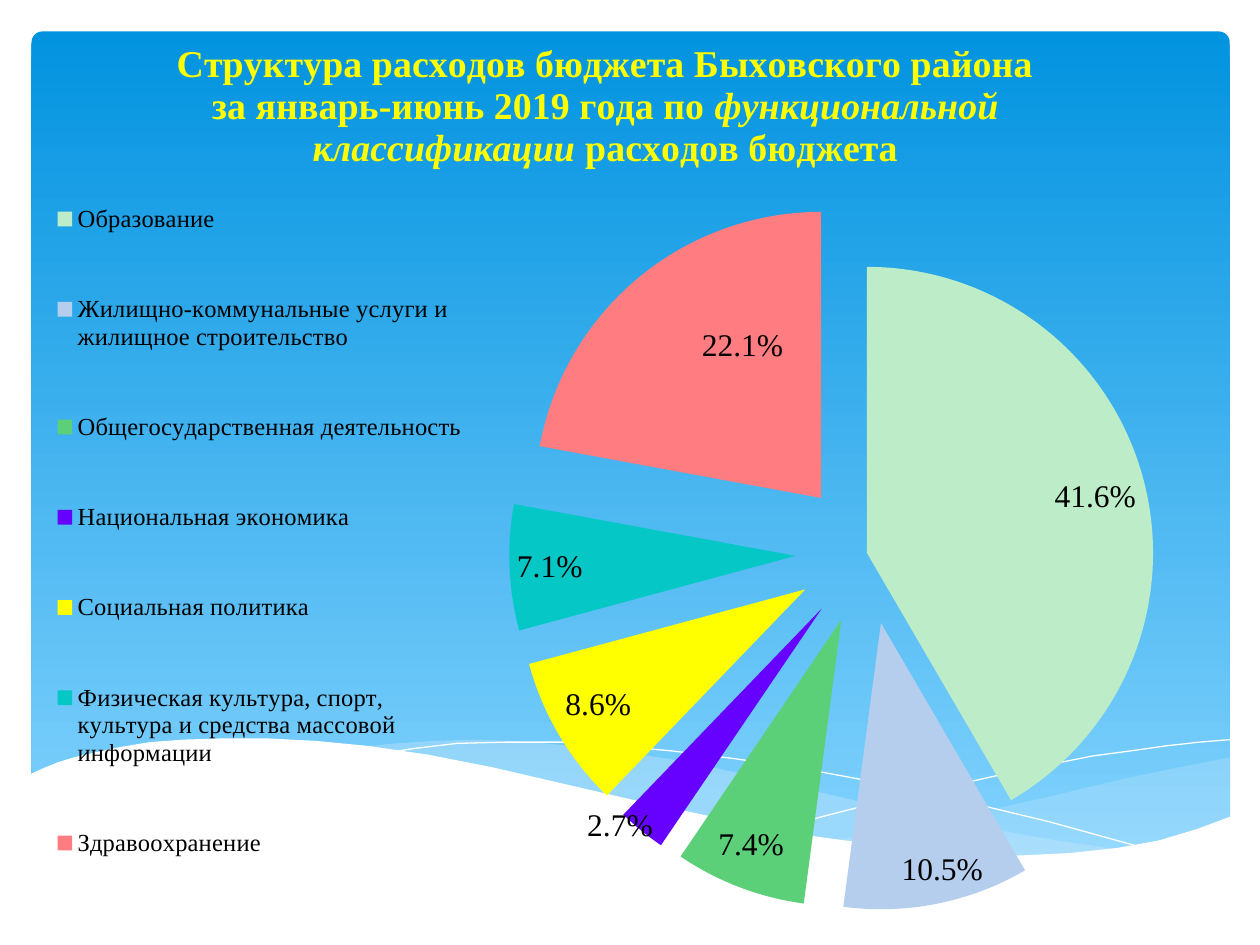
from lxml import etree
from pptx import Presentation
from pptx import util as u
from pptx.chart.data import CategoryChartData
from pptx.dml.color import RGBColor
from pptx.enum import chart as ch, shapes as sh
from pptx.oxml.ns import qn

WHITE = RGBColor(0xFF, 0xFF, 0xFF)
BLACK = RGBColor(0, 0, 0)
YELLOW = RGBColor(0xFF, 0xFF, 0)
DEEP = RGBColor(0x02, 0x93, 0xE0)
SKY = RGBColor(0x83, 0xD3, 0xFE)
MIST = RGBColor(0xC6, 0xE7, 0xFC)
SERIF = "Times New Roman"

DATA = [
    ("Образование", 0.416, RGBColor(0xBD, 0xEC, 0xC9)),
    ("Жилищно-коммунальные услуги и жилищное строительство", 0.105,
     RGBColor(0xB5, 0xCE, 0xED)),
    ("Общегосударственная деятельность", 0.074, RGBColor(0x5B, 0xD0, 0x78)),
    ("Национальная экономика", 0.027, RGBColor(0x66, 0, 0xFF)),
    ("Социальная политика", 0.086, YELLOW),
    ("Физическая культура, спорт, культура и средства массовой информации",
     0.071, RGBColor(0x05, 0xC8, 0xC6)),
    ("Здравоохранение", 0.221, RGBColor(0xFF, 0x7C, 0x80)),
]

# Label shifts by slice, as parts of the chart's width and height
SHIFTS = {1: (0.04, -0.01), 2: (-0.02, -0.02), 3: (-0.05, 0.02),
          4: (0, -0.01), 6: (0.05, 0.05)}

# Each wave: points, fill, opacity in percent (no fill means an open line)
WAVES = [
    ([(9.77, 6.01), (9.36, 6.09), (8.92, 6.18), (8.34, 6.32), (7.8, 6.44),
      (7.3, 6.55), (6.62, 6.67), (7.06, 6.73), (7.46, 6.77), (7.82, 6.79),
      (8.15, 6.8), (8.55, 6.78), (8.9, 6.74), (9.22, 6.67), (9.51, 6.59),
      (9.77, 6.49)], MIST, 29),
    ([(8.94, 6.75), (8.38, 6.67), (7.76, 6.56), (7.07, 6.42), (6.3, 6.24),
      (5.84, 6.13), (5.42, 6.04), (5.02, 5.98), (4.65, 5.93), (4.2, 5.89),
      (3.8, 5.87), (3.45, 5.88), (3.14, 5.9), (2.87, 5.93), (3.23, 5.98),
      (3.63, 6.04), (4.05, 6.13), (4.5, 6.24), (5.3, 6.42), (6.02, 6.57),
      (6.51, 6.66), (6.96, 6.72), (7.37, 6.77), (7.74, 6.79), (8.08, 6.8),
      (8.49, 6.79)], MIST, 40),
    ([(3.1, 5.97), (3.29, 5.94), (3.63, 5.9), (4.02, 5.89), (4.51, 5.89),
      (4.89, 5.92), (5.33, 5.96), (5.82, 6.02), (6.37, 6.1), (6.96, 6.21),
      (7.61, 6.35), (8.32, 6.52), (9.08, 6.73)], None, 0),
    ([(6.14, 6.59), (6.53, 6.48), (6.96, 6.37), (7.49, 6.25), (8.07, 6.12),
      (8.67, 6), (8.97, 5.96), (9.25, 5.92), (9.52, 5.89), (9.76, 5.87)],
     None, 0),
    ([(9.77, 6.48), (9.5, 6.58), (9.2, 6.67), (8.87, 6.73), (8.5, 6.77),
      (8.09, 6.79), (7.61, 6.77), (7.08, 6.72), (6.48, 6.64), (5.79, 6.51),
      (5.03, 6.35), (4.47, 6.22), (3.91, 6.09), (3.4, 5.99), (2.92, 5.92),
      (2.5, 5.88), (2.11, 5.86), (1.77, 5.86), (1.46, 5.87), (1.19, 5.89),
      (0.95, 5.93), (0.76, 5.97), (0.59, 6.01), (0.46, 6.05), (0.36, 6.09),
      (0.23, 6.15), (0.23, 7.31), (9.77, 7.31)], WHITE, 100),
]


def place(host, spot, **vals):
    """Give a chart part a manual layout as child number spot."""
    for old in host.findall(qn("c:layout")):
        host.remove(old)
    lay = etree.Element(qn("c:layout"))
    man = etree.SubElement(lay, qn("c:manualLayout"))
    for tag, val in vals.items():
        etree.SubElement(man, qn("c:" + tag)).set("val", str(val))
    host.insert(spot, lay)


def style(font, size):
    font.name, font.size = SERIF, u.Pt(size)
    font.color.rgb = BLACK


prs = Presentation()
prs.slide_width, prs.slide_height = u.Inches(10), u.Inches(7.5)
slide = prs.slides.add_slide(prs.slide_layouts[6])

# Sky and waves
sky = slide.shapes.add_shape(
    sh.MSO_SHAPE.ROUNDED_RECTANGLE,
    u.Inches(0.25), u.Inches(0.25), u.Inches(9.51), u.Inches(6.6))
sky.adjustments[0] = 0.013
sky.shadow.inherit = False
sky.line.fill.background()
sky.fill.gradient()
sky.fill.gradient_angle = 270
for stop, tint, pos in zip(sky.fill.gradient_stops, (DEEP, SKY), (0, 1)):
    stop.color.rgb = tint
    stop.position = pos

for pts, tint, alpha in WAVES:
    spots = [(u.Inches(x), u.Inches(y)) for x, y in pts]
    pen = slide.shapes.build_freeform(*spots[0])
    pen.add_line_segments(spots[1:], close=tint is not None)
    wave = pen.convert_to_shape()
    wave.shadow.inherit = False
    if tint is None:
        wave.fill.background()
        wave.line.color.rgb = WHITE
        wave.line.width = u.Pt(0)
        continue
    wave.line.fill.background()
    wave.fill.solid()
    wave.fill.fore_color.rgb = tint
    if alpha < 100:
        clr = wave.fill._xPr.find(".//" + qn("a:srgbClr"))
        etree.SubElement(clr, qn("a:alpha")).set("val", str(alpha * 1000))

# Pie chart
data = CategoryChartData(number_format="0.0%")
data.categories = [name for name, _, _ in DATA]
data.add_series("Series 1", [val for _, val, _ in DATA])
chart = slide.shapes.add_chart(
    ch.XL_CHART_TYPE.PIE, u.Inches(0.35), u.Inches(0.21),
    u.Inches(9.37), u.Inches(7.09), data).chart
chart.font.size = u.Pt(18)
chart.font.name = "Calibri"
chart.font.color.rgb = BLACK
plot = chart.plots[0]
plot.vary_by_categories = True
place(chart._chartSpace.chart.plotArea, 0, layoutTarget="inner",
      xMode="edge", yMode="edge", x=0.394, y=0.189, w=0.606, h=0.801)

# Title
frame = chart.chart_title.text_frame
lines = [
    [("Структура расходов бюджета Быховского района", False)],
    [("за январь-июнь 2019 года по ", False),
     ("функциональной классификации", True), (" расходов бюджета", False)],
]
for i, line in enumerate(lines):
    para = frame.add_paragraph() if i else frame.paragraphs[0]
    for words, slant in line:
        run = para.add_run()
        run.text = words
        font = run.font
        font.name, font.size = SERIF, u.Pt(21.6)
        font.bold, font.italic = True, slant
        font.color.rgb = YELLOW
place(chart.chart_title._element, 1, xMode="edge", yMode="edge",
      x=0.109, y=0.012)

# Legend
chart.has_legend = True
key = chart.legend
key.position = ch.XL_LEGEND_POSITION.LEFT
key.include_in_layout = False
style(key.font, 14)
place(key._element, 1, xMode="edge", yMode="edge",
      x=0.005, y=0.13, w=0.355, h=0.89)

# Slices and their labels; the first slice stays in the centre
pie = plot.series[0]
for i, (_, _, tint) in enumerate(DATA):
    fill = pie.points[i].format.fill
    fill.solid()
    fill.fore_color.rgb = tint
slices = pie._element.findall(qn("c:dPt"))
for host, val in ((slices[0], 0), (pie._element, 25)):
    burst = etree.Element(qn("c:explosion"))
    burst.set("val", str(val))
    if val:
        slices[0].addprevious(burst)
    else:
        host.find(qn("c:spPr")).addprevious(burst)

tags = pie.data_labels
tags.show_value = True
tags.number_format = "0.0%"
tags.number_format_is_linked = False
tags.position = ch.XL_LABEL_POSITION.INSIDE_END
style(tags.font, 18)
for i, (x, y) in SHIFTS.items():
    tag = pie.points[i].data_label
    style(tag.font, 18)
    tag.position = ch.XL_LABEL_POSITION.INSIDE_END
    place(tag._dLbl, 1, x=x, y=y)

prs.save("out.pptx")
